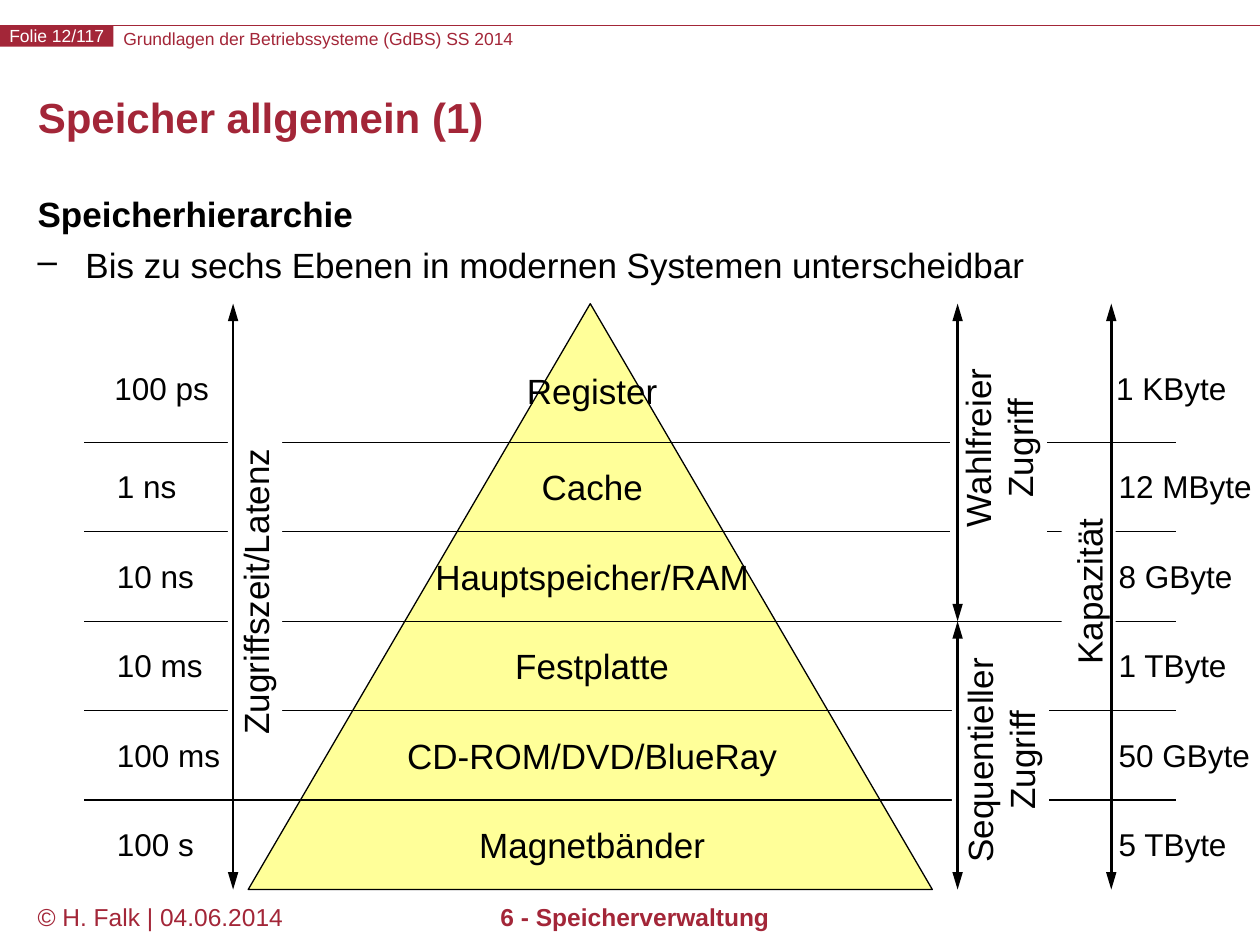
from dataclasses import dataclass
from lxml.etree import SubElement
from pptx import Presentation
from pptx.dml.color import RGBColor
from pptx.enum.shapes import MSO_CONNECTOR, MSO_SHAPE
from pptx.enum.text import MSO_ANCHOR, MSO_AUTO_SIZE, PP_ALIGN
from pptx.oxml.ns import qn
from pptx.util import Inches, Pt


@dataclass(frozen=True)
class Theme:
    face: str = "Arial"
    red: str = "A32638"
    black: str = "000000"
    white: str = "FFFFFF"
    yellow: str = "FFFF99"
    tiny: int = 10
    small: int = 14
    label: int = 18
    text: int = 20
    title: int = 24
    thin: float = 0.75
    thick: float = 1.5


T = Theme()
MID = {"vertical_anchor": MSO_ANCHOR.MIDDLE}
TOP = {"vertical_anchor": MSO_ANCHOR.TOP}
GROW = {"word_wrap": False, "auto_size": MSO_AUTO_SIZE.SHAPE_TO_FIT_TEXT}
BARE = dict.fromkeys(
    ("margin_left", "margin_top", "margin_right", "margin_bottom"), 0)
CENTER = {"alignment": PP_ALIGN.CENTER}

# Levels top down, then the values beside them with their box widths
LEVELS = ["Register", "Cache", "Hauptspeicher/RAM", "Festplatte",
          "CD-ROM/DVD/BlueRay", "Magnetbänder"]
TIMES = [("100 ps", 0.95), ("1 ns", 0.67), ("10 ns", 0.81),
         ("10 ms", 0.88), ("100 ms", 1.02), ("100 s", 0.81)]
SIZES = [("1 KByte", 1.08), ("12 MByte", 1.26), ("8 GByte", 1.1),
         ("1 TByte", 1.06), ("50 GByte", 1.24), ("5 TByte", 1.06)]
STEP = 0.71
PEAK, BASE = 2.41, 7.06
EDGES = [3.51 + STEP * i for i in range(5)]


def rgb(color):
    return RGBColor.from_string(color)


def inch(box):
    return [Inches(v) for v in box]


def put(part, values):
    for key, value in values.items():
        setattr(part, key, value)


def style(item, size, color=T.black, bold=False, para=None):
    put(item, para or {})
    put(item.font, {"name": T.face, "size": Pt(size), "bold": bold})
    item.font.color.rgb = rgb(color)


def write(shape, lines, size, frame=None, **look):
    """Fill a shape with one paragraph per line."""
    body = shape.text_frame
    put(body, {"word_wrap": True, **(frame or {})})
    body.text = "\n".join(lines)
    for item in body.paragraphs:
        style(item, size, **look)
    return body


def text(slide, box, line, size, **look):
    return write(slide.shapes.add_textbox(*inch(box)), [line], size, **look)


def block(slide, box, fill, kind=MSO_SHAPE.RECTANGLE):
    shape = slide.shapes.add_shape(kind, *inch(box))
    shape.shadow.inherit = False
    shape.fill.solid()
    shape.fill.fore_color.rgb = rgb(fill)
    shape.line.fill.background()
    return shape


def rule(slide, start, end, color=T.black, width=T.thin, heads=False):
    line = slide.shapes.add_connector(
        MSO_CONNECTOR.STRAIGHT, *inch(start + end))
    line.line.color.rgb = rgb(color)
    line.line.width = Pt(width)
    if heads:
        for tag in ("a:headEnd", "a:tailEnd"):
            SubElement(line.line._get_or_add_ln(), qn(tag),
                       type="triangle", w="med", len="lg")
    SubElement(line._element.spPr, qn("a:effectLst"))


def header(slide, box):
    left, top, width, high = box
    rule(slide, (left, top), (left + width, top), T.red)
    text(slide, (left + 0.98, top + 0.02, 6.6, high),
         "Grundlagen der Betriebssysteme (GdBS) SS 2014", T.tiny,
         color=T.red, frame=BARE)
    write(block(slide, (left, top, 0.9, high), T.red), ["Folie 12/117"],
          T.tiny, color=T.white, frame={**BARE, **MID, "word_wrap": False},
          para=CENTER)


def footer(slide, box):
    left, top, width, high = box
    text(slide, (left, top, 2.2, high), "© H. Falk | 04.06.2014",
         T.small, color=T.red)
    text(slide, (left + 1.81, top, width, high), "6 - Speicherverwaltung",
         T.small, color=T.red, bold=True, para=CENTER)


def heading(slide, box):
    title = slide.shapes.title
    put(title, dict(zip(("left", "top", "width", "height"), inch(box))))
    write(title, ["Speicher allgemein (1)"], T.title, color=T.red, bold=True,
          frame=MID,
          para={"alignment": PP_ALIGN.LEFT, "line_spacing": Pt(T.title)})


def intro(slide, box):
    body = text(slide, box, "Speicherhierarchie", T.text, bold=True,
                para={"line_spacing": 0.9})
    point = body.add_paragraph()
    point.text = "Bis zu sechs Ebenen in modernen Systemen unterscheidbar"
    props = point._p.get_or_add_pPr()
    props.set("marL", str(Inches(0.38)))
    props.set("indent", str(Inches(-0.38)))
    SubElement(props, qn("a:buChar"), char="–")
    style(point, T.text, para={"line_spacing": 1.2})


def pyramid(slide, box):
    left, _, width, _ = box
    peak = block(slide, box, T.yellow, MSO_SHAPE.ISOSCELES_TRIANGLE)
    peak.line.color.rgb = rgb(T.black)
    peak.line.width = Pt(T.thin)
    left, width = left + 0.04, width - 0.05
    first, *rest = LEVELS
    text(slide, (left, 2.88, width, 0.43), first, T.text, para=CENTER)
    for edge, name in zip(EDGES, rest):
        text(slide, (left, edge, width, STEP), name, T.text,
             frame={**MID, "word_wrap": False}, para=CENTER)


def grid(slide, left, right):
    for edge in EDGES:
        rule(slide, (left, edge), (right, edge))


def column(slide, left, values):
    """Values beside the pyramid, one per level."""
    tops = [2.88] + [edge + 0.15 for edge in EDGES]
    for i, (top, (name, width)) in enumerate(zip(tops, values)):
        shift = 0 if i else -0.02
        text(slide, (left + shift, top, width, 0.4), name, T.label,
             frame=GROW)


def scale(slide, x, top, end, box, lines):
    """Double arrow with an upright caption on white."""
    label = block(slide, box, T.white)
    label.rotation = 270
    write(label, lines, T.text, frame={**TOP, "word_wrap": False}, para=CENTER)
    rule(slide, (x, top), (x, end), width=T.thick, heads=True)


def main():
    deck = Presentation()
    put(deck, {"slide_width": Inches(10), "slide_height": Inches(7.5)})
    slide = deck.slides.add_slide(deck.slide_layouts[5])

    # Frame and text
    header(slide, (0, 0.2, 10, 0.17))
    footer(slide, (0.2, 7.11, 6.06, 0.39))
    heading(slide, (0.2, 0.6, 9.61, 0.72))
    intro(slide, (0.2, 1.52, 9.61, 0.8))

    # Memory levels
    pyramid(slide, (1.97, PEAK, 5.43, BASE - PEAK))
    grid(slide, 0.67, 9.33)

    # Scales and their values
    split = EDGES[2]
    scale(slide, 8.82, PEAK, BASE, (8.01, 4.48, 1.26, 0.43), ["Kapazität"])
    column(slide, 8.78, SIZES)
    scale(slide, 7.6, split, BASE, (7.03, 5.65, 1.82, 0.77),
          ["Sequentieller", "Zugriff"])
    scale(slide, 7.6, PEAK, split, (7.19, 3.17, 1.47, 0.77),
          ["Wahlfreier", "Zugriff"])
    scale(slide, 1.85, PEAK, BASE, (0.79, 4.48, 2.47, 0.43),
          ["Zugriffszeit/Latenz"])
    column(slide, 0.83, TIMES)
    deck.save("out.pptx")


if __name__ == "__main__":
    main()
